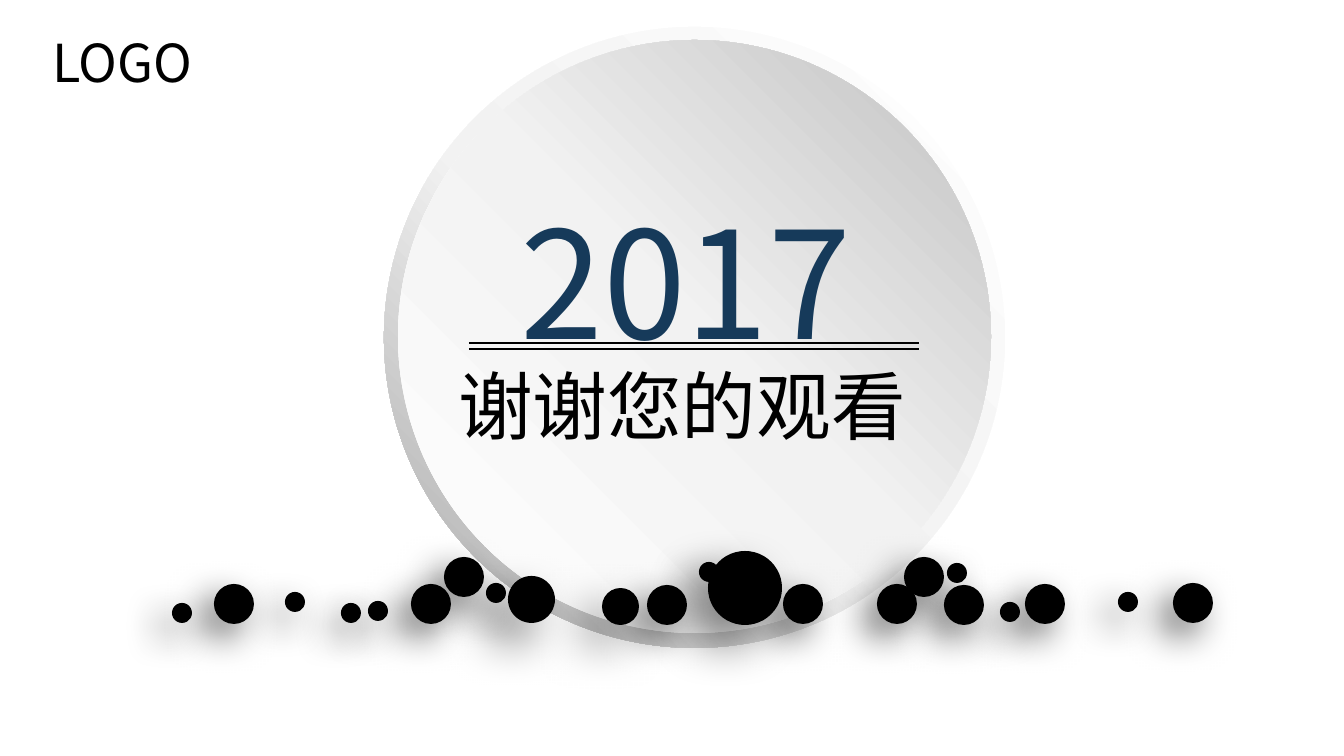
from lxml import etree
from pptx import Presentation
from pptx.dml.color import RGBColor
from pptx.enum.shapes import MSO_CONNECTOR, MSO_SHAPE
from pptx.enum.text import MSO_AUTO_SIZE
from pptx.oxml import parse_xml
from pptx.oxml.ns import nsdecls, qn
from pptx.util import Emu, Pt

DONUT, ELLIPSE = MSO_SHAPE.DONUT, MSO_SHAPE.OVAL
STRAIGHT = MSO_CONNECTOR.STRAIGHT
FIT_SHAPE = MSO_AUTO_SIZE.SHAPE_TO_FIT_TEXT
FONT = "Noto Sans CJK SC"
COLORS = {"black": "000000", "navy": "163A5A", "white": "FFFFFF",
          "pale": "F2F2F2", "silver": "BFBFBF", "gray": "A6A6A6"}

SMALL, MEDIUM = 20, 40
# Shadows as opacity in percent, blur and distance in points
NORMAL_SHADOW, WIDE_SHADOW = (60, 20, 10), (50, 25, 15)
# left, top, diameter, shadow; from back to front
DOTS = [
    (708, 551, 74, WIDE_SHADOW),
    (877, 584, MEDIUM, NORMAL_SHADOW),
    (411, 584, MEDIUM, NORMAL_SHADOW),
    (368, 601, SMALL, NORMAL_SHADOW),
    (944, 585, MEDIUM, NORMAL_SHADOW),
    (486, 583, SMALL, NORMAL_SHADOW),
    (1000, 602, SMALL, NORMAL_SHADOW),
    (602, 588, 37, WIDE_SHADOW),
    (1025, 584, MEDIUM, NORMAL_SHADOW),
    (647, 585, MEDIUM, NORMAL_SHADOW),
    (1118, 592, SMALL, NORMAL_SHADOW),
    (904, 557, MEDIUM, NORMAL_SHADOW),
    (341, 603, SMALL, NORMAL_SHADOW),
    (699, 562, SMALL, NORMAL_SHADOW),
    (508, 576, 47, WIDE_SHADOW),
    (783, 584, MEDIUM, NORMAL_SHADOW),
    (214, 584, MEDIUM, NORMAL_SHADOW),
    (172, 603, SMALL, NORMAL_SHADOW),
    (444, 557, MEDIUM, NORMAL_SHADOW),
    (285, 592, SMALL, NORMAL_SHADOW),
    (947, 563, SMALL, NORMAL_SHADOW),
    (1173, 583, MEDIUM, NORMAL_SHADOW),
]


def px(length):
    return Emu(round(length * 914400 / 134.4))


def rgb(name):
    return RGBColor.from_string(COLORS[name])


def add_round(shapes, kind, left, top, diameter):
    shape = shapes.add_shape(kind, px(left), px(top), px(diameter), px(diameter))
    shape.shadow.inherit = False
    shape.line.fill.background()
    return shape


def set_gradient(shape, stops, angle):
    """Fill with (percent, color) stops; the angle runs clockwise in degrees."""
    stop_xml = "".join(
        f'<a:gs pos="{percent * 1000}"><a:srgbClr val="{COLORS[color]}"/></a:gs>'
        for percent, color in stops)
    gradient = parse_xml(
        f'<a:gradFill {nsdecls("a")} rotWithShape="1"><a:gsLst>{stop_xml}</a:gsLst>'
        f'<a:lin ang="{angle * 60000}" scaled="0"/></a:gradFill>')
    shape.element.spPr.find(qn("a:prstGeom")).addnext(gradient)


def add_disc(slide):
    shapes = slide.shapes.add_group_shape().shapes
    rim = add_round(shapes, DONUT, 384, 27, 621)
    rim.adjustments[0] = 0.049
    set_gradient(rim, [(0, "white"), (55, "pale"), (100, "gray")], 135)
    face = add_round(shapes, ELLIPSE, 398, 40, 593)
    set_gradient(face, [(0, "white"), (51, "pale"), (100, "silver")], 315)


def add_dot(slide, left, top, diameter, shadow):
    dot = add_round(slide.shapes, ELLIPSE, left, top, diameter)
    dot.fill.solid()
    dot.fill.fore_color.rgb = rgb("black")
    opacity, blur, distance = shadow
    effects = dot.element.spPr.find(qn("a:effectLst"))
    effects.append(parse_xml(
        f'<a:outerShdw {nsdecls("a")} blurRad="{Pt(blur)}" dist="{Pt(distance)}" '
        f'dir="{135 * 60000}" algn="tr" rotWithShape="0">'
        f'<a:srgbClr val="{COLORS["black"]}"><a:alpha val="{opacity * 1000}"/>'
        '</a:srgbClr></a:outerShdw>'))


def add_rule(slide, left, right, y):
    rule = slide.shapes.add_connector(STRAIGHT, px(left), px(y), px(right), px(y))
    rule.line.color.rgb = rgb("black")
    rule.line.width = Pt(0.75)
    etree.SubElement(rule.element.spPr, qn("a:effectLst"))


def add_text(slide, text, box, size, color):
    frame = slide.shapes.add_textbox(*map(px, box)).text_frame
    frame.word_wrap = False
    frame.auto_size = FIT_SHAPE
    run = frame.paragraphs[0].add_run()
    run.text = text
    run.font.size = Pt(size)
    run.font.name = FONT
    run.font.color.rgb = rgb(color)
    east_asian = etree.SubElement(run.font._element, qn("a:ea"))
    east_asian.set("typeface", FONT)


def main():
    presentation = Presentation()
    presentation.slide_width, presentation.slide_height = px(1344), px(756)
    slide = presentation.slides.add_slide(presentation.slide_layouts[6])
    add_disc(slide)
    add_text(slide, "谢谢您的观看", (445, 353, 480, 103), 40, "black")
    for y in (343, 349):
        add_rule(slide, 469, 919, y)
    add_text(slide, "2017", (507, 184, 359, 192), 80, "navy")
    for dot in DOTS:
        add_dot(slide, *dot)
    add_text(slide, "LOGO", (39, 24, 179, 76), 28, "black")
    presentation.save("out.pptx")


if __name__ == "__main__":
    main()
